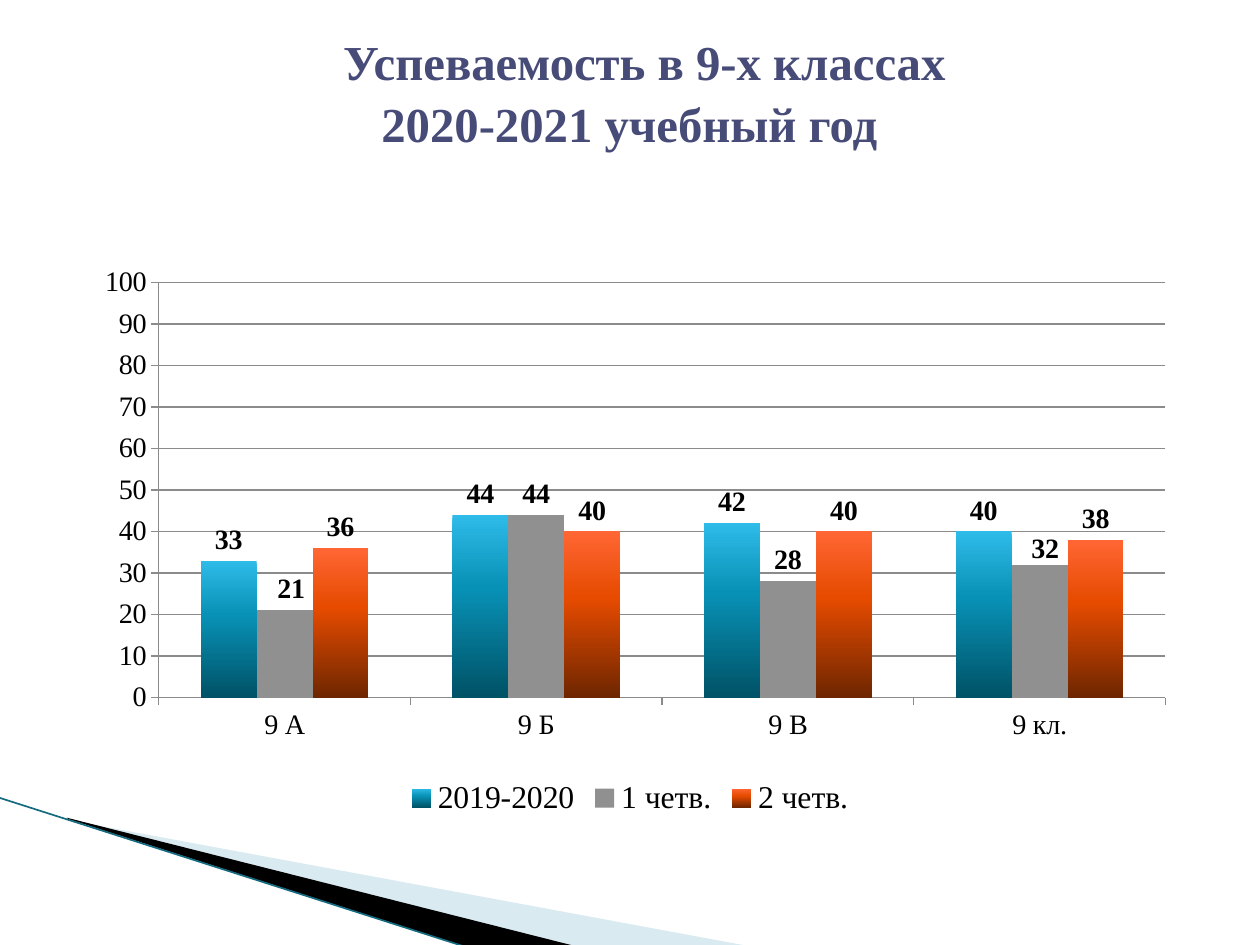
import pptx
import pptx.chart.data
import pptx.dml.color
import pptx.enum.chart
import pptx.enum.text
import pptx.oxml
import pptx.oxml.ns
import pptx.util

Inches, Pt = pptx.util.Inches, pptx.util.Pt
qn = pptx.oxml.ns.qn
FONT = "Times New Roman"
W, H = 10, 7.5


def rgb(value):
    return pptx.dml.color.RGBColor.from_string(value)


def set_font(font, size, color="000000", bold=False):
    font.name, font.size, font.bold = FONT, Pt(size), bold
    font.color.rgb = rgb(color)


prs = pptx.Presentation()
prs.slide_width, prs.slide_height = Inches(W), Inches(H)
s = prs.slides.add_slide(prs.slide_layouts[6])

# Corner wedges, in hundredths of an inch
wedges = [
    ("A0CBDC", 40, [(55, 651), (595, 751), (456, 751), (55, 650)]),
    ("000000", 100, [(53, 649), (457, 751), (372, 752), (54, 650)]),
]
for color, opacity, points in wedges:
    fb = s.shapes.build_freeform(*points[0], scale=Inches(0.01))
    fb.add_line_segments(points[1:], close=True)
    sp = fb.convert_to_shape()
    sp.shadow.inherit = False
    sp.fill.solid()
    sp.fill.fore_color.rgb = rgb(color)
    sp.line.fill.background()
    if opacity < 100:
        solid = sp._element.spPr.find(qn("a:solidFill"))
        solid[0].append(pptx.oxml.parse_xml(
            f'<a:alpha {pptx.oxml.ns.nsdecls("a")} val="{opacity * 1000}"/>'))

edge = s.shapes.add_connector(
    1, Inches(-0.01), Inches(6.33), Inches(3.71), Inches(7.52))
edge.line.color.rgb = rgb("146B80")
edge.line.width = Pt(0.95)
edge._element.spPr.append(
    pptx.oxml.parse_xml(f'<a:effectLst {pptx.oxml.ns.nsdecls("a")}/>'))

# Chart
cd = pptx.chart.data.CategoryChartData(number_format="General")
cd.categories = ["9 А", "9 Б", "9 В", "9 кл."]
cd.add_series("2019-2020", [33, 44, 42, 40])
cd.add_series("1 четв.", [21, 44, 28, 32])
cd.add_series("2 четв.", [36, 40, 40, 38])
chart = s.shapes.add_chart(
    pptx.enum.chart.XL_CHART_TYPE.COLUMN_CLUSTERED,
    Inches(0.06 * W), Inches(1.68), Inches(0.88 * W), Inches(4.84), cd).chart
chart.has_title = False
set_font(chart.font, 18.1)
chart.has_legend = True
chart.legend.position = pptx.enum.chart.XL_LEGEND_POSITION.BOTTOM
chart.legend.include_in_layout = False
set_font(chart.legend.font, 18.1)

val, cat = chart.value_axis, chart.category_axis
val.minimum_scale, val.maximum_scale, val.major_unit = 0, 100, 10
val.has_major_gridlines = True
for axis in (val, cat):
    axis.major_tick_mark = pptx.enum.chart.XL_TICK_MARK.OUTSIDE
    set_font(axis.tick_labels.font, 16.1)
for part in (val, cat, val.major_gridlines):
    part.format.line.color.rgb = rgb("8B8B8B")
    part.format.line.width = Pt(0.75)

plot = chart.plots[0]
plot.gap_width, plot.overlap, plot.vary_by_categories = 150, 0, False
outside = pptx.enum.chart.XL_LABEL_POSITION.OUTSIDE_END
fills = [["2EBBE8", "0891B6", "005266"], ["909090"],
         ["FF6633", "E64B00", "6E2600"]]
for series, colors in zip(plot.series, fills):
    series.format.fill.solid()
    series.format.fill.fore_color.rgb = rgb(colors[0])
    if len(colors) > 1:
        stops = "".join(
            f'<a:gs pos="{pos}000"><a:srgbClr val="{c}"/></a:gs>'
            for pos, c in zip((0, 40, 100), colors))
        solid = series._element.spPr.find(qn("a:solidFill"))
        solid.getparent().replace(solid, pptx.oxml.parse_xml(
            f'<a:gradFill {pptx.oxml.ns.nsdecls("a")}><a:gsLst>{stops}</a:gsLst>'
            '<a:lin ang="5400000" scaled="0"/></a:gradFill>'))
    labels = series.data_labels
    labels.show_value = True
    labels.position = outside
    set_font(labels.font, 16, bold=True)

# Nudged labels of the middle series: point, shift right, shift down
for index, dx, dy in [(0, 0.006, 0), (3, 0.005, 0.008)]:
    label = plot.series[1].points[index].data_label
    set_font(label.font, 16, bold=True)
    label.position = outside
    idx = plot.series[1]._element.xpath(f"c:dLbls/c:dLbl/c:idx[@val='{index}']")[0]
    idx.addnext(pptx.oxml.parse_xml(
        f'<c:layout {pptx.oxml.ns.nsdecls("c")}><c:manualLayout>'
        f'<c:x val="{dx}"/><c:y val="{dy}"/></c:manualLayout></c:layout>'))

area = chart._chartSpace.chart.plotArea
for old in area.findall(qn("c:layout")):
    area.remove(old)
sizes = "".join(f'<c:{k} val="{v}"/>' for k, v in
                zip("xywh", (0.075, 0.116, 0.908, 0.681)))
area.insert(0, pptx.oxml.parse_xml(
    f'<c:layout {pptx.oxml.ns.nsdecls("c")}><c:manualLayout>'
    '<c:layoutTarget val="inner"/><c:xMode val="edge"/><c:yMode val="edge"/>'
    f'{sizes}</c:manualLayout></c:layout>'))

# Title
title = s.shapes.add_textbox(Inches(0.43), Inches(0.44), Inches(9.03), Inches(0.95))
tf = title.text_frame
tf.word_wrap = True
tf.vertical_anchor = pptx.enum.text.MSO_ANCHOR.MIDDLE
tf.margin_top, tf.margin_bottom = 0, Inches(0.4)
tf.text = "Успеваемость в 9-х классах\n2020-2021 учебный год"
for p, indent in zip(tf.paragraphs, (0.34, 0.1)):
    p.alignment = pptx.enum.text.PP_ALIGN.CENTER
    p.line_spacing = Pt(35.4)
    p._p.get_or_add_pPr().set("marL", str(Inches(indent)))
    set_font(p.runs[0].font, 27.9, "474B78", bold=True)

prs.save("out.pptx")
